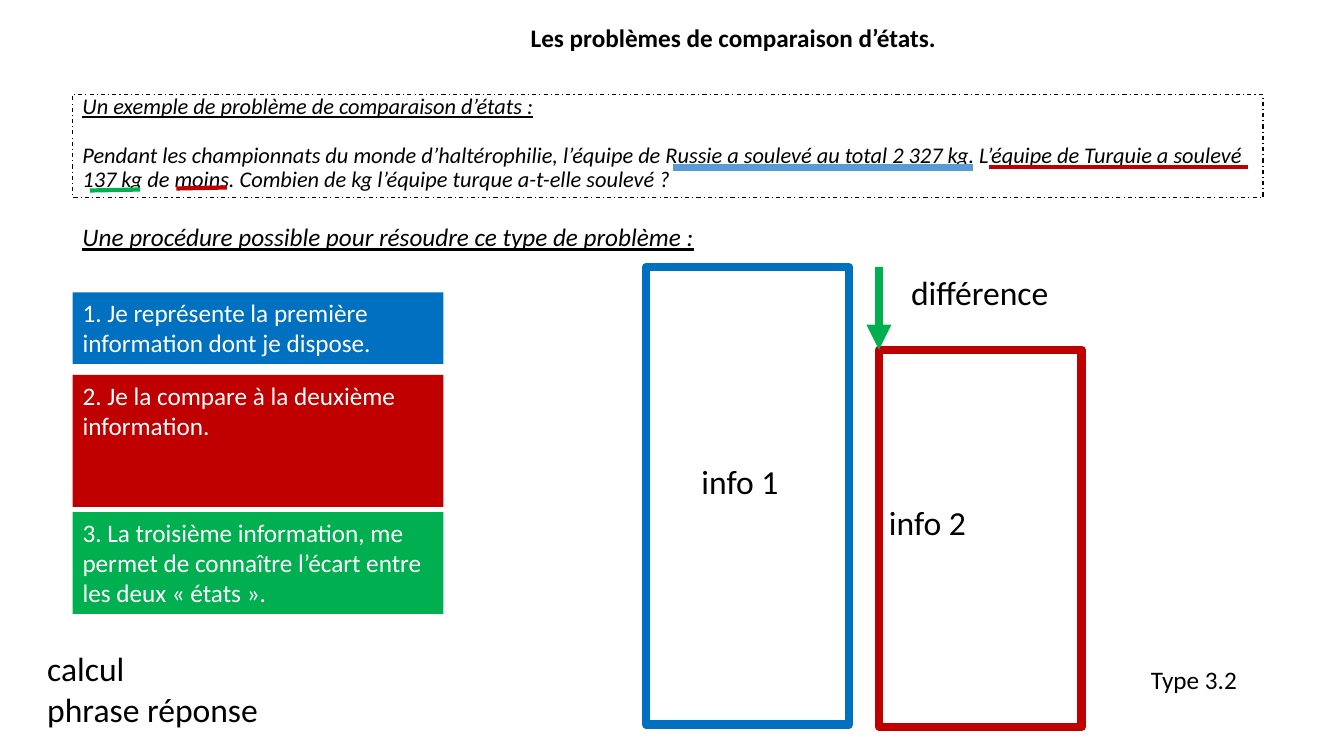
from dataclasses import dataclass
from typing import Optional

from lxml import etree
from pptx import Presentation
from pptx import util as u
from pptx.dml.color import RGBColor
from pptx.enum import dml, shapes, text
from pptx.oxml import ns

BLACK = RGBColor(0x00, 0x00, 0x00)
WHITE = RGBColor(0xFF, 0xFF, 0xFF)
BLUE = RGBColor(0x00, 0x70, 0xC0)
LIGHT_BLUE = RGBColor(0x5B, 0x9B, 0xD5)
RED = RGBColor(0xC0, 0x00, 0x00)
GREEN = RGBColor(0x00, 0xB0, 0x50)

SLIDE_WIDTH, SLIDE_HEIGHT = u.Inches(13.333), u.Inches(7.5)
LEFT_EDGE = 5.4
STEP_WIDTH = 27.6
BAR_WIDTH = 15.08
BAR_TOP, SECOND_BAR_TOP, SECOND_BAR_LEFT = 35.33, 46.27, 65.4


@dataclass(frozen=True)
class Area:
    """Left, top, width and height in percent of the slide."""
    left: float
    top: float
    width: float
    height: float


@dataclass(frozen=True)
class Step:
    wording: str
    top: float
    height: float
    color: RGBColor


@dataclass(frozen=True)
class Bar:
    label: str
    area: Area
    color: RGBColor
    label_drop: float
    right_inset: float
    align: text.PP_ALIGN


@dataclass(frozen=True)
class Label:
    wording: str
    area: Area
    size: float = 18
    italic: bool = False
    underline: bool = False


@dataclass(frozen=True)
class Stroke:
    start: tuple[float, float]
    end: tuple[float, float]
    color: RGBColor
    width: float = 3
    arrow: bool = False


STEPS = [
    Step("1. Je représente la première information dont je dispose.", 38.67, 9.47, BLUE),
    Step("2. Je la compare à la deuxième information.", 49.6, 17.47, RED),
    Step("3. La troisième information, me permet de connaître l’écart entre "
         "les deux « états ».", 67.73, 13.47, GREEN),
]
BARS = [
    Bar("info 1", Area(48.08, BAR_TOP, BAR_WIDTH, 60.53), BLUE, 1.92, 0.25, text.PP_ALIGN.CENTER),
    Bar("info 2", Area(SECOND_BAR_LEFT, SECOND_BAR_TOP, BAR_WIDTH, 49.87), RED, 1.51, 0.1,
        text.PP_ALIGN.LEFT),
]
LABELS = [
    Label("différence", Area(67.05, BAR_TOP, 13.5, 6.67), size=24),
    Label("Une procédure possible pour résoudre ce type de problème :",
          Area(LEFT_EDGE, 28.67, 49.95, 5.33), italic=True, underline=True),
    Label("calcul\nphrase réponse", Area(2.78, 85.07, 43.13, 12.13), size=24),
    Label("Type 3.2", Area(84.9, 87.2, 9.08, 5.33)),
]
STROKES = [
    Stroke((SECOND_BAR_LEFT, BAR_TOP), (SECOND_BAR_LEFT, SECOND_BAR_TOP), GREEN, 6, arrow=True),
    Stroke((50.1, 22.13), (72.38, 22.13), LIGHT_BLUE, 5),
    Stroke((73.58, 22.13), (92.85, 22.13), RED),
    Stroke((13.13, 24.93), (16.88, 24.8), RED),
    Stroke((6.68, 25.2), (10.43, 25.07), GREEN),
]
EXAMPLE = ("Un exemple de problème de comparaison d’états :\n"
           "Pendant les championnats du monde d’haltérophilie, l’équipe de Russie a soulevé "
           "au total 2 327 kg. L’équipe de Turquie a soulevé 137 kg de moins. "
           "Combien de kg l’équipe turque a-t-elle soulevé ?")


def across(share: float) -> int:
    return round(SLIDE_WIDTH * share / 100)


def down(share: float) -> int:
    return round(SLIDE_HEIGHT * share / 100)


def bounds(area: Area) -> tuple[int, int, int, int]:
    return across(area.left), down(area.top), across(area.width), down(area.height)


def write(holder, wording: str, *, size: float = 18, color: RGBColor = BLACK,
          bold: bool = False, italic: bool = False, underline: bool = False,
          align=text.PP_ALIGN.LEFT, anchor=text.MSO_ANCHOR.TOP, spacing: float = 1.0,
          top_inset: float = 0.05, right_inset: float = 0.1):
    frame = holder.text_frame
    frame.word_wrap = True
    frame.auto_size = text.MSO_AUTO_SIZE.NONE
    frame.vertical_anchor = anchor
    frame.margin_left, frame.margin_right = u.Inches(0.1), u.Inches(right_inset)
    frame.margin_top, frame.margin_bottom = u.Inches(top_inset), u.Inches(0.05)
    frame.text = wording
    for paragraph in frame.paragraphs:
        paragraph.alignment = align
        paragraph.line_spacing = spacing
        for run in paragraph.runs:
            font = run.font
            font.name, font.size = "Calibri", u.Pt(size)
            font.bold, font.italic, font.underline = bold, italic, underline
            font.color.rgb = color
    return frame.paragraphs


def add_box(slide, area: Area, fill: Optional[RGBColor] = None,
            line: Optional[RGBColor] = None, line_width: float = 6):
    box = slide.shapes.add_shape(shapes.MSO_SHAPE.RECTANGLE, *bounds(area))
    box.shadow.inherit = False
    if fill is None:
        box.fill.background()
    else:
        box.fill.solid()
        box.fill.fore_color.rgb = fill
    if line is None:
        box.line.fill.background()
    else:
        box.line.color.rgb = line
        box.line.width = u.Pt(line_width)
    return box


def add_title(slide) -> None:
    title = slide.shapes.title
    title.left, title.top, title.width, title.height = bounds(Area(34.35, 2.27, 40.43, 5.33))
    write(title, "Les problèmes de comparaison d’états.", bold=True, align=text.PP_ALIGN.CENTER)


def add_example(slide) -> None:
    example = add_box(slide, Area(LEFT_EDGE, 12.53, 88.58, 13.6), line=BLACK, line_width=0.75)
    example.line.dash_style = dml.MSO_LINE.DASH_DOT
    heading, _ = write(example, EXAMPLE, size=16, italic=True, spacing=0.9,
                       anchor=text.MSO_ANCHOR.BOTTOM)
    heading.runs[0].font.underline = True
    heading.space_after = u.Pt(17.5)


def add_step(slide, step: Step) -> None:
    box = add_box(slide, Area(LEFT_EDGE, step.top, STEP_WIDTH, step.height), fill=step.color)
    write(box, step.wording, color=WHITE)


def add_bar(slide, bar: Bar) -> None:
    box = add_box(slide, bar.area, line=bar.color)
    write(box, bar.label, size=24, align=bar.align,
          top_inset=bar.label_drop, right_inset=bar.right_inset)


def add_label(slide, label: Label) -> None:
    write(slide.shapes.add_textbox(*bounds(label.area)), label.wording, size=label.size,
          italic=label.italic, underline=label.underline)


def add_stroke(slide, stroke: Stroke) -> None:
    (x1, y1), (x2, y2) = stroke.start, stroke.end
    connector = slide.shapes.add_connector(shapes.MSO_CONNECTOR.STRAIGHT,
                                           across(x1), down(y1), across(x2), down(y2))
    connector.line.color.rgb = stroke.color
    connector.line.width = u.Pt(stroke.width)
    properties = connector._element.spPr
    if stroke.arrow:
        etree.SubElement(properties.find(ns.qn("a:ln")), ns.qn("a:tailEnd"), type="triangle")
    etree.SubElement(properties, ns.qn("a:effectLst"))


def main() -> None:
    deck = Presentation()
    deck.slide_width, deck.slide_height = SLIDE_WIDTH, SLIDE_HEIGHT
    slide = deck.slides.add_slide(deck.slide_layouts.get_by_name("Title Only"))
    add_title(slide)
    add_example(slide)
    for draw, items in ((add_step, STEPS), (add_bar, BARS),
                        (add_label, LABELS), (add_stroke, STROKES)):
        for item in items:
            draw(slide, item)
    deck.save("out.pptx")


if __name__ == "__main__":
    main()
